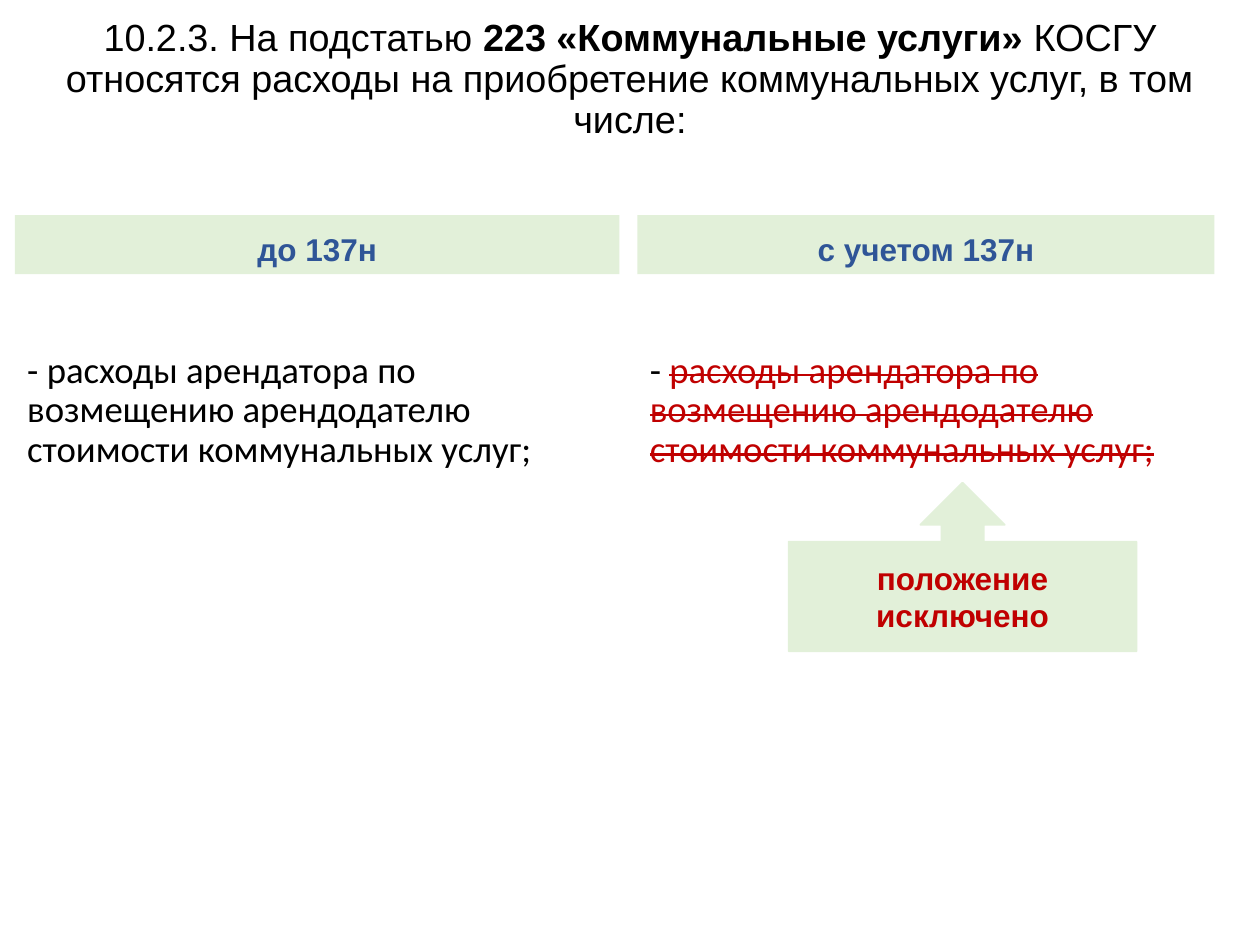
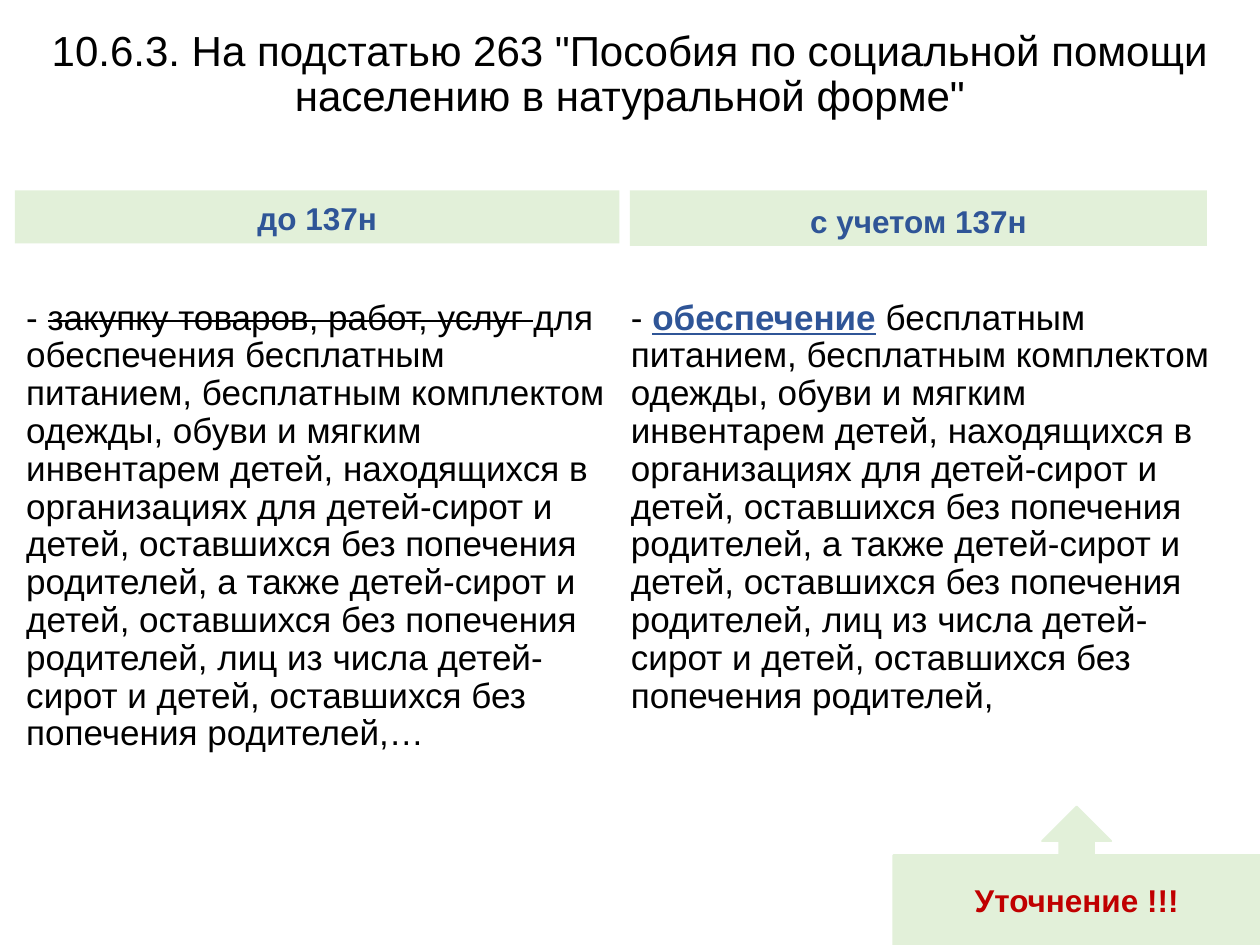
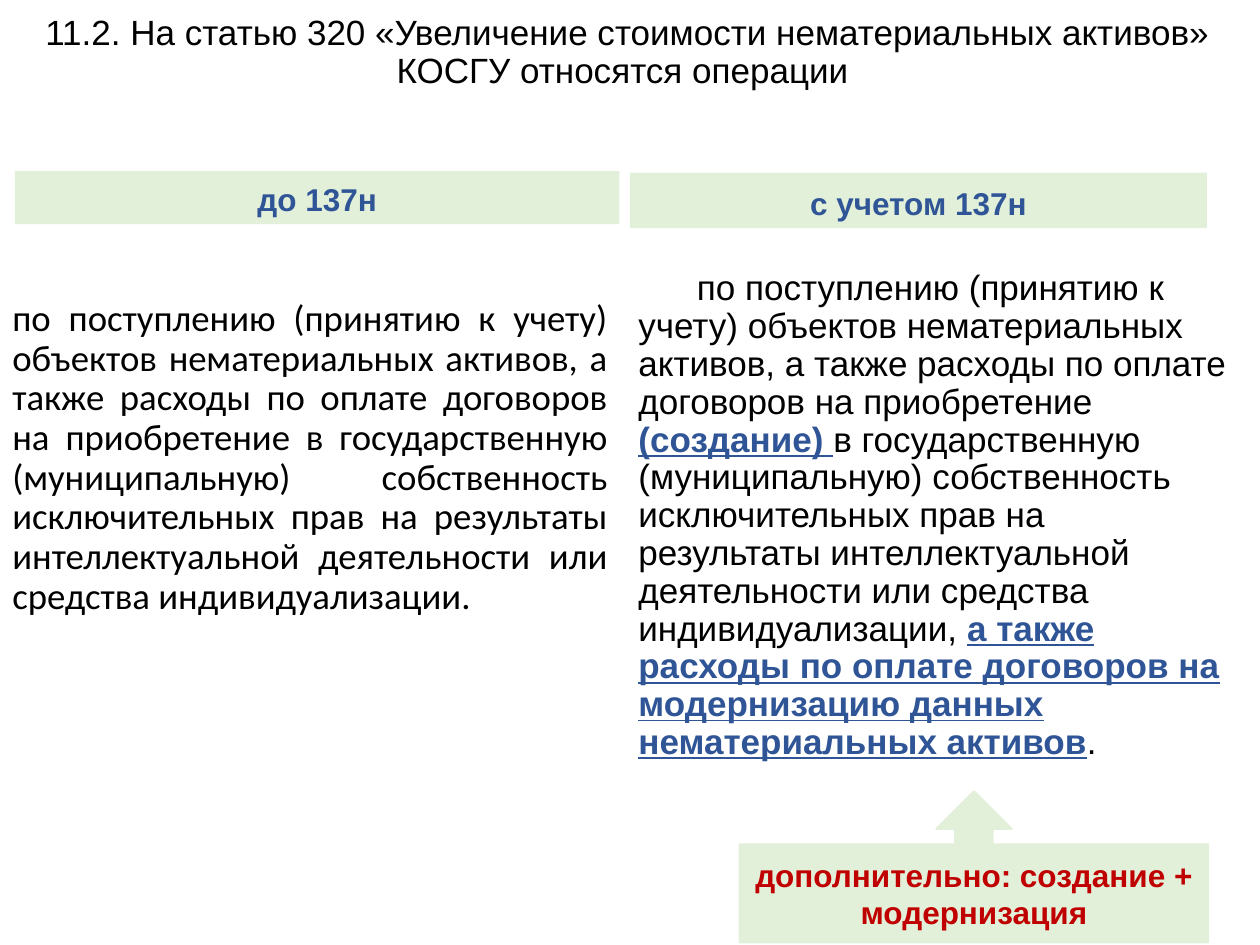
"""Builds three slides comparing budget code wording before and after order 137н."""
from pptx import Presentation
from pptx.dml.color import RGBColor
from pptx.enum.shapes import MSO_SHAPE as Shape
from pptx.enum.text import MSO_ANCHOR as Anchor, PP_ALIGN as Align
from pptx.util import Cm, Pt

COLORS = {"text": "000000", "accent": "2F5597", "alert": "C00000", "band": "E2F0D9"}
STYLES = {
    "plain": {},
    "bold": {"bold": True},
    "struck": {"strike": True},
    "removed": {"strike": True, "color": "alert"},
    "added": {"bold": True, "underline": True, "color": "accent"},
}
BEFORE, AFTER = "до 137н", "с учетом 137н"
BAND_LEFT, BAND_WIDTH = 0.3, (12.19, 11.63)

LESSEE = "расходы арендатора по возмещению арендодателю стоимости коммунальных услуг;"
ORPHANS = (
    "бесплатным питанием, бесплатным комплектом одежды, обуви и мягким инвентарем детей, "
    "находящихся в организациях для детей-сирот и детей, оставшихся без попечения родителей, "
    "а также детей-сирот и детей, оставшихся без попечения родителей, лиц из числа "
    "детей-сирот и детей, оставшихся без попечения родителей,"
)
RECEIPT = (
    "по поступлению (принятию к учету) объектов нематериальных активов, "
    "а также расходы по оплате договоров на приобретение "
)
RIGHTS = (
    "в государственную (муниципальную) собственность исключительных прав "
    "на результаты интеллектуальной деятельности или средства индивидуализации"
)

SLIDES = [
    {
        "title": {
            "box": (0, 0.33, 25.4, 2.57), "size": 21.6,
            "runs": [
                ("10.2.3. На подстатью ", "plain"),
                ("223 «Коммунальные услуги» ", "bold"),
                ("КОСГУ относятся расходы на приобретение коммунальных услуг, в том числе:", "plain"),
            ],
        },
        "bands": {"right": 12.85, "tops": (4.34, 4.34), "heights": (1.19, 1.19)},
        "wordings": [
            {"box": (0.3, 6.96, 12.19, 10.97), "size": 21, "face": "Calibri",
             "runs": [("- " + LESSEE, "plain")]},
            {"box": (12.85, 6.96, 11.84, 10.97), "size": 21, "face": "Calibri",
             "runs": [("- ", "plain"), (LESSEE, "removed")]},
        ],
        "verdict": ("положение исключено", (15.9, 9.73, 7.01, 3.4)),
    },
    {
        "title": {
            "box": (0, 0.23, 25.4, 2.57), "size": 24,
            "runs": [('10.6.3. На подстатью 263 "Пособия по социальной помощи '
                      'населению в натуральной форме"', "plain")],
        },
        "bands": {"right": 12.7, "tops": (3.84, 3.84), "heights": (1.07, 1.12)},
        "wordings": [
            {"box": (0.28, 5.92, 12.22, 11.99), "size": 20,
             "runs": [("- ", "plain"), ("закупку товаров, работ, услуг ", "struck"),
                      ("для обеспечения " + ORPHANS + "…", "plain")]},
            {"box": (12.47, 5.92, 12.42, 10.97), "size": 20,
             "runs": [("- ", "plain"), ("обеспечение", "added"), (" " + ORPHANS, "plain")]},
        ],
        "verdict": ("Уточнение !!!", (18.01, 16.26, 7.39, 2.79)),
    },
    {
        "title": {
            "box": (-0.1, 0, 25.5, 2.13), "size": 20,
            "runs": [("11.2. На статью 320 «Увеличение стоимости нематериальных активов» "
                      "КОСГУ относятся операции ", "plain")],
        },
        "bands": {"right": 12.7, "tops": (3.45, 3.48), "heights": (1.07, 1.12)},
        "wordings": [
            {"box": (0, 5.92, 12.5, 11.99), "size": 21, "face": "Calibri",
             "align": Align.JUSTIFY, "runs": [(RECEIPT + RIGHTS + ".", "plain")]},
            {"box": (12.62, 5.33, 12.42, 10.97), "size": 20, "indent": 1.18,
             "runs": [
                 (RECEIPT, "plain"),
                 ("(создание) ", "added"),
                 (RIGHTS + ", ", "plain"),
                 ("а также расходы по оплате договоров на модернизацию данных "
                  "нематериальных активов", "added"),
                 (".", "plain"),
             ]},
        ],
        "verdict": ("дополнительно: создание + модернизация", (14.91, 15.95, 9.45, 3.05)),
    },
]


def rgb(key):
    return RGBColor.from_string(COLORS[key])


def write(holder, runs, size, face="Arial", color="text", bold=None,
          align=Align.LEFT, anchor=Anchor.TOP, spacing=0.9, indent=0):
    frame = holder.text_frame
    frame.word_wrap = True
    frame.vertical_anchor = anchor
    paragraph = frame.paragraphs[0]
    paragraph.alignment = align
    paragraph.line_spacing = spacing
    if indent:
        paragraph._p.get_or_add_pPr().set("indent", str(Cm(indent)))
    font = paragraph.font
    font.name, font.size, font.bold = face, Pt(size), bold
    font.color.rgb = rgb(color)
    for words, style_name in runs:
        style = STYLES[style_name]
        run = paragraph.add_run()
        run.text = words
        run.font.bold = style.get("bold")
        run.font.underline = style.get("underline")
        if "color" in style:
            run.font.color.rgb = rgb(style["color"])
        if "strike" in style:
            run._r.get_or_add_rPr().set("strike", "sngStrike")


def add_text(slide, box, **text):
    write(slide.shapes.add_textbox(*map(Cm, box)), **text)


def add_panel(slide, kind, box, words, color, anchor, spacing, outlined=False):
    panel = slide.shapes.add_shape(kind, *map(Cm, box))
    panel.shadow.inherit = False
    panel.fill.solid()
    panel.fill.fore_color.rgb = rgb("band")
    if outlined:
        panel.line.color.rgb = rgb("band")
        panel.line.width = Pt(1)
    else:
        panel.line.fill.background()
    write(panel, [(words, "plain")], 18, color=color, bold=True,
          align=Align.CENTER, anchor=anchor, spacing=spacing)


def build_slide(deck, content):
    slide = deck.slides.add_slide(deck.slide_layouts[6])
    add_text(slide, **content["title"], align=Align.CENTER, anchor=Anchor.MIDDLE)
    bands = content["bands"]
    lefts = (BAND_LEFT, bands["right"])
    for heading, left, top, width, height in zip(
            (BEFORE, AFTER), lefts, bands["tops"], BAND_WIDTH, bands["heights"]):
        add_panel(slide, Shape.RECTANGLE, (left, top, width, height),
                  heading, "accent", Anchor.BOTTOM, 0.9)
    for wording in content["wordings"]:
        add_text(slide, **wording)
    verdict, box = content["verdict"]
    add_panel(slide, Shape.UP_ARROW_CALLOUT, box, verdict, "alert",
              Anchor.MIDDLE, 1.0, outlined=True)


def main():
    deck = Presentation()
    deck.slide_width, deck.slide_height = Cm(25.4), Cm(19.05)
    for content in SLIDES:
        build_slide(deck, content)
    deck.save("out.pptx")


if __name__ == "__main__":
    main()
